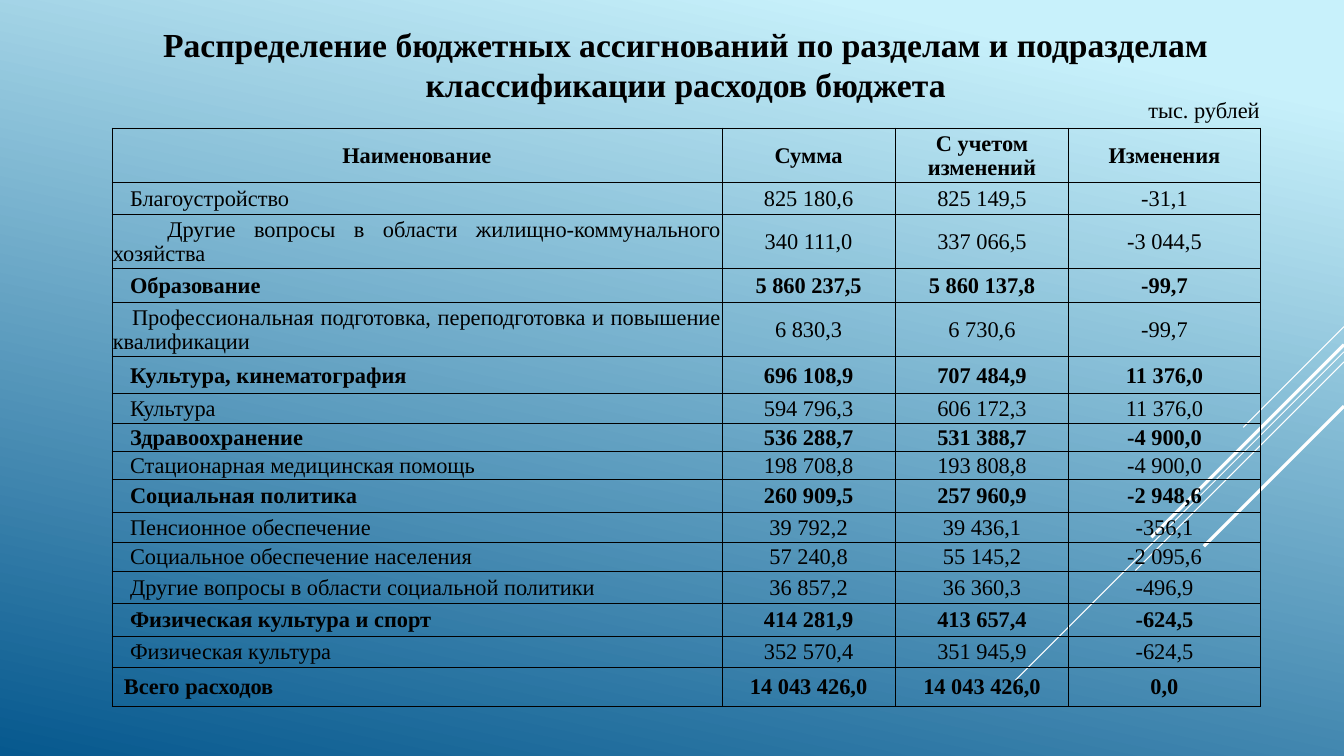
from dataclasses import dataclass

from lxml import etree
from pptx import Presentation
from pptx import util as u
from pptx.dml.color import RGBColor
from pptx.enum import shapes, text
from pptx.oxml import ns


@dataclass(frozen=True)
class Theme:
    """Colours, font and type sizes of the deck."""
    ink: str = "000000"
    ray: str = "FFFFFF"
    sky: str = "C8F1FB"
    sea: str = "06588E"
    font: str = "Times New Roman"
    title: int = 24
    body: int = 16
    border: float = 0.5


THEME = Theme()
WIDTH, HEIGHT = 13.33, 7.5
INDENT, TOTAL_INDENT = 0.17, 0.11
COLUMNS = [6.05, 1.72, 1.72, 1.9]
HEADER = ["Наименование", "Сумма", "С учетом изменений", "Изменения"]
BUDGET = [
    (0.31, False, INDENT, "Благоустройство", "825 180,6", "825 149,5", "-31,1"),
    (0.54, False, 0.54, "Другие вопросы в области жилищно-коммунального хозяйства",
     "340 111,0", "337 066,5", "-3 044,5"),
    (0.33, True, INDENT, "Образование", "5 860 237,5", "5 860 137,8", "-99,7"),
    (0.54, False, 0.19, "Профессиональная подготовка, переподготовка и повышение квалификации",
     "6 830,3", "6 730,6", "-99,7"),
    (0.36, True, INDENT, "Культура, кинематография", "696 108,9", "707 484,9", "11 376,0"),
    (0.3, False, INDENT, "Культура", "594 796,3", "606 172,3", "11 376,0"),
    (0.28, True, INDENT, "Здравоохранение", "536 288,7", "531 388,7", "-4 900,0"),
    (0.28, False, INDENT, "Стационарная медицинская помощь", "198 708,8", "193 808,8", "-4 900,0"),
    (0.32, True, INDENT, "Социальная политика", "260 909,5", "257 960,9", "-2 948,6"),
    (0.3, False, INDENT, "Пенсионное обеспечение", "39 792,2", "39 436,1", "-356,1"),
    (0.29, False, INDENT, "Социальное обеспечение населения", "57 240,8", "55 145,2", "-2 095,6"),
    (0.32, False, INDENT, "Другие вопросы в области социальной политики",
     "36 857,2", "36 360,3", "-496,9"),
    (0.32, True, INDENT, "Физическая культура и спорт", "414 281,9", "413 657,4", "-624,5"),
    (0.31, False, INDENT, "Физическая культура", "352 570,4", "351 945,9", "-624,5"),
    (0.39, True, TOTAL_INDENT, "Всего расходов", "14 043 426,0", "14 043 426,0", "0,0"),
]
RAYS = [(3.24, 1, 0.75), (3.49, 3.26, 0.75), (3.59, 2.07, 0.75),
        (3.42, 1.91, 2.25), (4.03, 1.39, 2.25)]


def style(p, size, bold=False, align=text.PP_ALIGN.CENTER):
    """Format a paragraph with the theme font."""
    p.alignment = align
    p.font.name = THEME.font
    p.font.size = u.Pt(size)
    p.font.bold = bold
    p.font.color.rgb = RGBColor.from_string(THEME.ink)


def paint_background(slide):
    """Fill the slide with the sky-to-sea gradient."""
    fill = slide.background.fill
    fill.gradient()
    fill.gradient_angle = 258
    for stop, color, position in zip(fill.gradient_stops, (THEME.sky, THEME.sea), (0.1, 1)):
        stop.color.rgb = RGBColor.from_string(color)
        stop.position = position


def add_rays(slide, right):
    """Draw the diagonal rays that leave the right edge."""
    for top, reach, weight in RAYS:
        ray = slide.shapes.add_connector(
            shapes.MSO_CONNECTOR.STRAIGHT, u.Inches(right), u.Inches(top),
            u.Inches(right - reach), u.Inches(top + reach))
        ray.line.color.rgb = RGBColor.from_string(THEME.ray)
        ray.line.width = u.Pt(weight)
        etree.SubElement(ray._element.spPr, ns.qn("a:effectLst"))


def add_title(slide, box, words):
    """Place the slide title in the box."""
    sp = slide.shapes.title
    sp.left, sp.top, sp.width, sp.height = map(u.Inches, box)
    tf = sp.text_frame
    tf.text = words
    tf.word_wrap = True
    tf.auto_size = text.MSO_AUTO_SIZE.NONE
    tf.vertical_anchor = text.MSO_ANCHOR.MIDDLE
    style(tf.paragraphs[0], THEME.title, bold=True)


def add_unit(slide, box, words):
    """Place the unit label in the box."""
    tf = slide.shapes.add_textbox(*map(u.Inches, box)).text_frame
    tf.text = words
    tf.word_wrap = True
    style(tf.paragraphs[0], THEME.body, align=text.PP_ALIGN.LEFT)


def add_borders(cell):
    """Rule all four sides of a cell."""
    props = cell._tc.get_or_add_tcPr()
    for side in ("lnL", "lnR", "lnT", "lnB"):
        ln = etree.SubElement(props, ns.qn(f"a:{side}"), w=str(u.Pt(THEME.border)))
        fill = etree.SubElement(ln, ns.qn("a:solidFill"))
        etree.SubElement(fill, ns.qn("a:srgbClr"), val=THEME.ink)


def fill_cell(cell, words, bold, indent=None):
    """Write a cell, justified with a first-line indent if one is given."""
    cell.text = words
    cell.vertical_anchor = text.MSO_ANCHOR.MIDDLE
    cell.margin_left = cell.margin_right = cell.margin_top = u.Inches(0.01)
    cell.margin_bottom = 0
    add_borders(cell)
    cell.fill.background()
    p = cell.text_frame.paragraphs[0]
    style(p, THEME.body, bold)
    if indent is not None:
        p.alignment = text.PP_ALIGN.JUSTIFY
        p._p.get_or_add_pPr().set("indent", str(u.Inches(indent)))


def add_budget_table(slide, left, top):
    """Build the budget table from its top left corner."""
    rows = [(0.54, True, None, *HEADER), *BUDGET]
    height = sum(row[0] for row in rows)
    table = slide.shapes.add_table(
        len(rows), len(COLUMNS), u.Inches(left), u.Inches(top),
        u.Inches(sum(COLUMNS)), u.Inches(height)).table
    table.first_row = table.horz_banding = False
    for column, width in zip(table.columns, COLUMNS):
        column.width = u.Inches(width)
    for line, (row_height, bold, indent, name, *amounts) in zip(table.rows, rows):
        line.height = u.Inches(row_height)
        name_cell, *amount_cells = line.cells
        fill_cell(name_cell, name, bold, indent)
        for cell, amount in zip(amount_cells, amounts):
            fill_cell(cell, amount, bold)


def build_budget_slide(prs):
    """Compose the budget slide."""
    slide = prs.slides.add_slide(prs.slide_layouts[5])
    paint_background(slide)
    add_rays(slide, WIDTH)
    add_title(slide, (1.49, 0.18, 10.62, 0.91),
              "Распределение бюджетных ассигнований по разделам и подразделам "
              "классификации расходов бюджета")
    add_unit(slide, (11.29, 0.9, 1.65, 0.37), "тыс. рублей")
    add_budget_table(slide, 1.11, 1.27)


def main():
    """Create and save the presentation."""
    prs = Presentation()
    prs.slide_width, prs.slide_height = u.Inches(WIDTH), u.Inches(HEIGHT)
    build_budget_slide(prs)
    prs.save("out.pptx")


if __name__ == "__main__":
    main()
